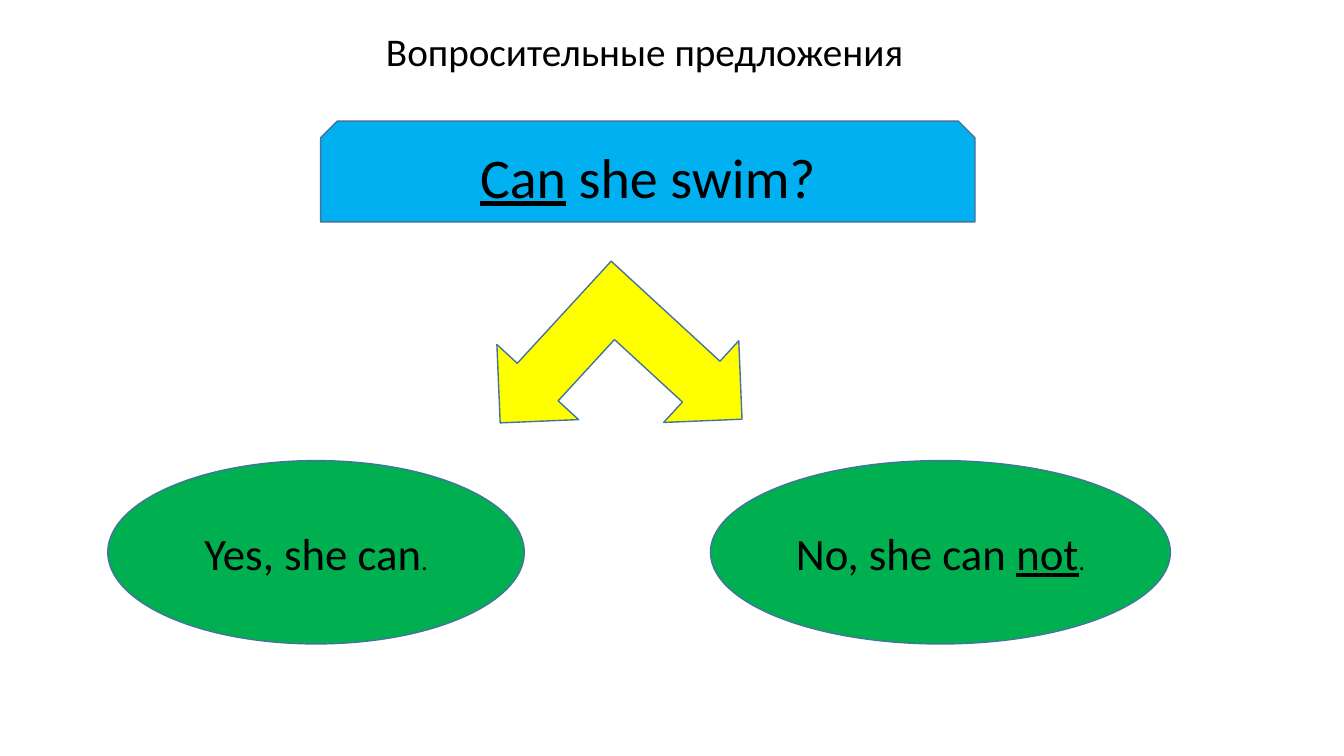
from dataclasses import dataclass

from pptx import Presentation
from pptx.dml.color import RGBColor
from pptx.enum.shapes import MSO_SHAPE
from pptx.enum.text import MSO_ANCHOR, MSO_AUTO_SIZE, PP_ALIGN
from pptx.util import Pt


@dataclass(frozen=True)
class Theme:
    font: str = "Calibri"
    text: RGBColor = RGBColor(0x00, 0x00, 0x00)
    outline: RGBColor = RGBColor(0x43, 0x73, 0x9E)
    question: RGBColor = RGBColor(0x00, 0xB0, 0xF0)
    arrow: RGBColor = RGBColor(0xFF, 0xFF, 0x00)
    answer: RGBColor = RGBColor(0x00, 0xB0, 0x50)
    title_size: int = 28
    question_size: int = 40
    answer_size: int = 32
    stop_size: int = 18


@dataclass(frozen=True)
class Phrase:
    text: str
    size: int
    underline: bool = False


@dataclass(frozen=True)
class Block:
    kind: MSO_SHAPE
    left: float
    top: float
    width: float
    height: float
    fill: RGBColor
    phrases: tuple[Phrase, ...] = ()
    rotation: float = 0


THEME = Theme()
ANSWER_TOP, ANSWER_HEIGHT = 329, 131

BLOCKS = (
    Block(MSO_SHAPE.SNIP_2_SAME_RECTANGLE, 229, 86.5, 467.5, 72, THEME.question,
          (Phrase("Can", THEME.question_size, True),
           Phrase(" she swim?", THEME.question_size))),
    Block(MSO_SHAPE.LEFT_UP_ARROW, 360, 193.5, 165, 158.5, THEME.arrow, rotation=222.6),
    Block(MSO_SHAPE.OVAL, 77, ANSWER_TOP, 297.5, ANSWER_HEIGHT, THEME.answer,
          (Phrase("Yes, she can", THEME.answer_size),
           Phrase(".", THEME.stop_size))),
    Block(MSO_SHAPE.OVAL, 507.5, ANSWER_TOP, 328.5, ANSWER_HEIGHT, THEME.answer,
          (Phrase("No, she can ", THEME.answer_size),
           Phrase("not", THEME.answer_size, True),
           Phrase(".", THEME.stop_size))),
)


def add_title(s, text: str) -> None:
    sp = s.shapes.title
    sp.left, sp.top, sp.width, sp.height = Pt(268.5), Pt(16), Pt(388), Pt(41)
    tf = sp.text_frame
    tf.text = text
    tf.word_wrap = False
    tf.auto_size = MSO_AUTO_SIZE.SHAPE_TO_FIT_TEXT
    tf.vertical_anchor = MSO_ANCHOR.TOP
    p = tf.paragraphs[0]
    p.alignment = PP_ALIGN.LEFT
    p.font.name = THEME.font
    p.font.size = Pt(THEME.title_size)
    p.font.color.rgb = THEME.text


def add_block(s, block: Block) -> None:
    sp = s.shapes.add_shape(block.kind, Pt(block.left), Pt(block.top),
                            Pt(block.width), Pt(block.height))
    sp.rotation = block.rotation
    sp.shadow.inherit = False
    sp.fill.solid()
    sp.fill.fore_color.rgb = block.fill
    sp.line.color.rgb = THEME.outline
    sp.line.width = Pt(1)
    if not block.phrases:
        return
    tf = sp.text_frame
    tf.word_wrap = True
    tf.vertical_anchor = MSO_ANCHOR.MIDDLE
    p = tf.paragraphs[0]
    p.alignment = PP_ALIGN.CENTER
    p.font.name = THEME.font
    p.font.color.rgb = THEME.text
    for phrase in block.phrases:
        r = p.add_run()
        r.text = phrase.text
        r.font.size = Pt(phrase.size)
        if phrase.underline:
            r.font.underline = True


def main() -> None:
    prs = Presentation()
    prs.slide_width, prs.slide_height = Pt(960), Pt(540)
    s = prs.slides.add_slide(prs.slide_layouts[5])

    # Heading
    add_title(s, "Вопросительные предложения")

    # Question, arrow and the two short answers
    for block in BLOCKS:
        add_block(s, block)

    prs.save("out.pptx")


if __name__ == "__main__":
    main()
